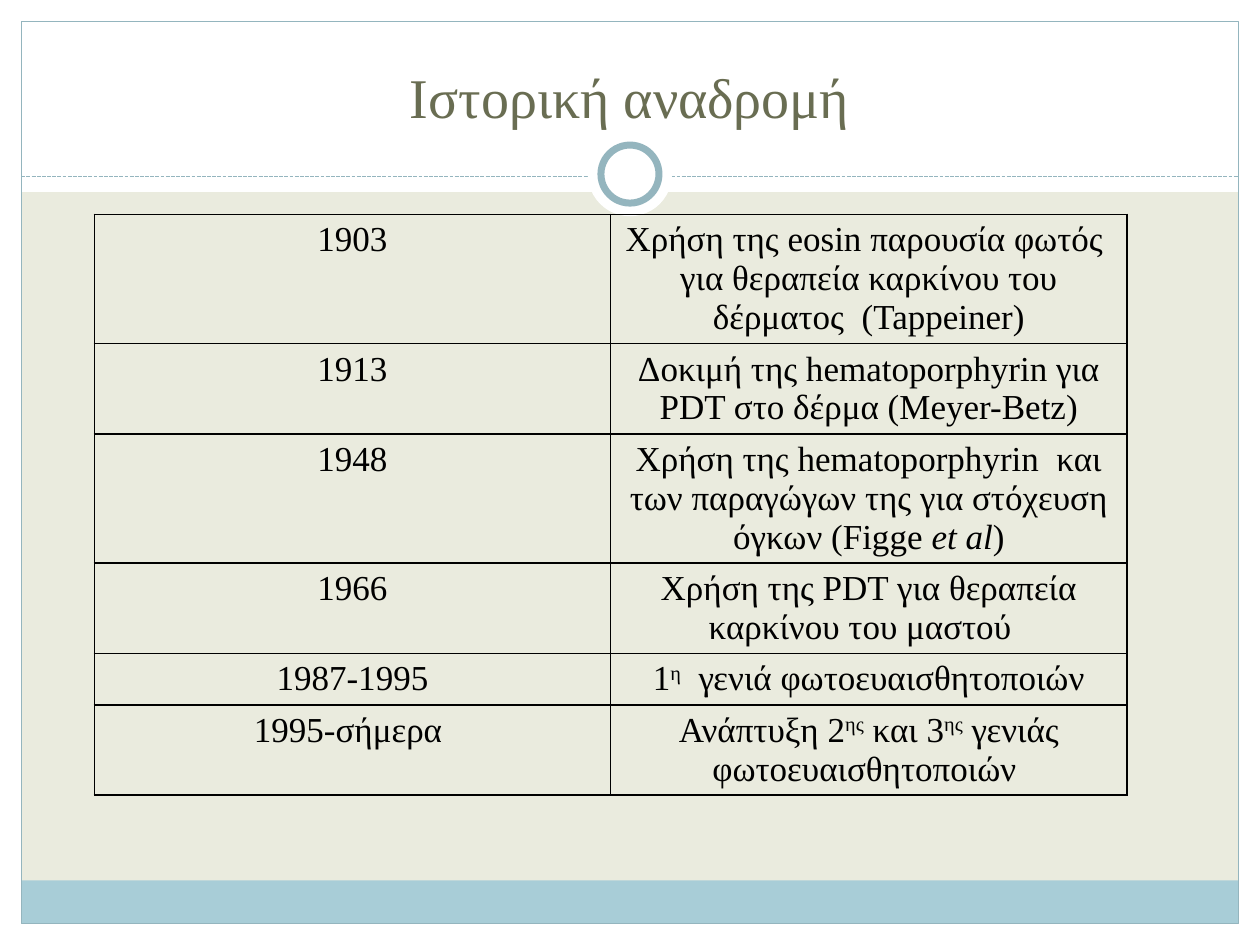
from lxml.etree import SubElement
from pptx import Presentation
from pptx.dml.color import RGBColor
from pptx.enum.dml import MSO_LINE_DASH_STYLE as Dash
from pptx.enum.shapes import MSO_CONNECTOR, MSO_SHAPE as Shape
from pptx.enum.text import MSO_ANCHOR, MSO_AUTO_SIZE, PP_ALIGN
from pptx.oxml import parse_xml
from pptx.oxml.ns import nsdecls, qn
from pptx.util import Cm, Pt

COLORS = {
    "background": "EAEBDE",
    "white": "FFFFFF",
    "band": "A8CDD7",
    "accent": "94B5BE",
    "title": "696D52",
    "black": "000000",
}
FONT = "Times New Roman"
WIDTH, HEIGHT, MARGIN = 25.4, 19.05, 0.43

HISTORY = [
    ("1903", ["Χρήση της eosin παρουσία φωτός  για θεραπεία καρκίνου του δέρματος  (Tappeiner)"]),
    ("1913", ["Δοκιμή της hematoporphyrin για PDT στο δέρμα (Meyer-Betz)"]),
    ("1948", ["Χρήση της hematoporphyrin  και των παραγώγων της για στόχευση όγκων (Figge ",
              ("et al", {"italic": True}), ")"]),
    ("1966", ["Χρήση της PDT για θεραπεία καρκίνου του μαστού  "]),
    ("1987-1995", ["1", ("η", {"raised": True}), "  γενιά φωτοευαισθητοποιών"]),
    ("1995-σήμερα ", ["Ανάπτυξη 2", ("ης", {"raised": True}), " και 3",
                      ("ης", {"raised": True}), " γενιάς φωτοευαισθητοποιών "]),
]


def color(name):
    return RGBColor.from_string(COLORS[name])


def add_text(para, text, size=20, fill="black", italic=False, raised=False):
    para.alignment = PP_ALIGN.CENTER
    span = para.add_run()
    span.text = text
    span.font.name = FONT
    span.font.size = Pt(size)
    span.font.italic = italic
    span.font.color.rgb = color(fill)
    if raised:
        span.font._element.set("baseline", "30000")


def add_block(page, kind, left, top, width, height, fill=None, line=None, weight=0.75):
    block = page.shapes.add_shape(kind, Cm(left), Cm(top), Cm(width), Cm(height))
    block.shadow.inherit = False
    if fill:
        block.fill.solid()
        block.fill.fore_color.rgb = color(fill)
    else:
        block.fill.background()
    if line:
        block.line.color.rgb = color(line)
        block.line.width = Pt(weight)
    else:
        block.line.fill.background()


def add_divider(page, top):
    divider = page.shapes.add_connector(
        MSO_CONNECTOR.STRAIGHT, Cm(MARGIN), Cm(top), Cm(WIDTH - MARGIN), Cm(top))
    divider.line.color.rgb = color("accent")
    divider.line.width = Pt(0.75)
    divider.line.dash_style = Dash.SQUARE_DOT
    SubElement(divider._element.spPr, qn("a:effectLst"))


def add_circle(page, center, diameter, **style):
    add_block(page, Shape.OVAL, (WIDTH - diameter) / 2, center - diameter / 2,
              diameter, diameter, **style)


def add_frame(page):
    inner = WIDTH - 2 * MARGIN
    for bounds in (
        (0, HEIGHT - MARGIN, WIDTH, MARGIN),
        (0, 0, WIDTH, 3.87),
        (0, 0, MARGIN, HEIGHT),
        (WIDTH - MARGIN, 0, MARGIN, HEIGHT),
    ):
        add_block(page, Shape.RECTANGLE, *bounds, fill="white")
    add_block(page, Shape.RECTANGLE, MARGIN, 17.75, inner, 0.87, fill="band")
    add_block(page, Shape.RECTANGLE, MARGIN, MARGIN, inner, HEIGHT - 2 * MARGIN, line="accent")
    add_divider(page, 3.56)
    add_circle(page, 3.51, 1.7, fill="white")
    add_circle(page, 3.51, 1.17, fill="white", line="accent", weight=4)


def set_title(page, text):
    title = page.shapes.title
    page.shapes.element.append(title.element)
    title.left, title.top, title.width, title.height = Cm(0.85), Cm(0.64), Cm(23.7), Cm(2.1)
    frame = title.text_frame
    frame.word_wrap = True
    frame.auto_size = MSO_AUTO_SIZE.NONE
    frame.vertical_anchor = MSO_ANCHOR.BOTTOM
    add_text(frame.paragraphs[0], text, size=32, fill="title")


def set_borders(cell):
    properties = cell._tc.get_or_add_tcPr()
    for index, side in enumerate(("lnL", "lnR", "lnT", "lnB")):
        properties.insert(index, parse_xml(
            f'<a:{side} {nsdecls("a")} w="{Pt(1)}"><a:solidFill>'
            f'<a:srgbClr val="{COLORS["black"]}"/></a:solidFill></a:{side}>'))


def add_history(page, left, top, column_width, row_height):
    holder = page.shapes.add_table(
        len(HISTORY), 2, Cm(left), Cm(top), Cm(2 * column_width), Cm(len(HISTORY) * row_height))
    table = holder.table
    table.first_row = table.horz_banding = False
    for row, (period, event) in enumerate(HISTORY):
        for column, parts in enumerate(([period], event)):
            cell = table.cell(row, column)
            cell.fill.background()
            set_borders(cell)
            para = cell.text_frame.paragraphs[0]
            for part in parts:
                text, style = (part, {}) if isinstance(part, str) else part
                add_text(para, text, **style)


def main():
    deck = Presentation()
    deck.slide_width, deck.slide_height = Cm(WIDTH), Cm(HEIGHT)
    page = deck.slides.add_slide(deck.slide_layouts[5])
    page.background.fill.solid()
    page.background.fill.fore_color.rgb = color("background")
    add_frame(page)
    set_title(page, "Ιστορική αναδρομή")
    add_history(page, left=1.9, top=4.32, column_width=10.41, row_height=1.04)
    deck.save("out.pptx")


if __name__ == "__main__":
    main()
